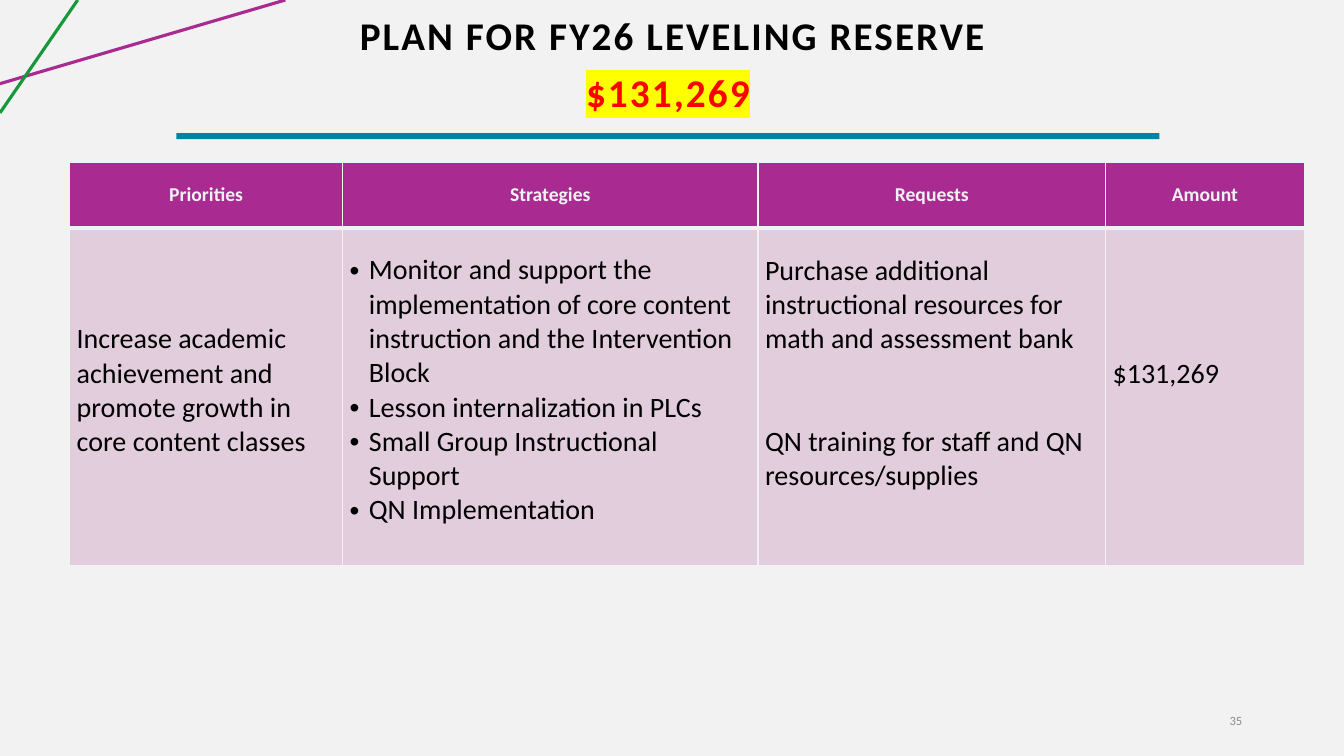
"""Build the leveling reserve plan slide."""
from pptx import Presentation
from pptx import util as u
from pptx.dml.color import RGBColor
from pptx.enum import shapes, text
from pptx.oxml.ns import qn
from lxml import etree

WIDTH, HEIGHT = u.Inches(13.33), u.Inches(7.5)
FONT = "Calibri"
PALE = RGBColor(0xF2, 0xF2, 0xF2)
PURPLE = RGBColor(0xA9, 0x2A, 0x91)
GREEN = RGBColor(0x15, 0x98, 0x39)
TEAL = RGBColor(0x00, 0x83, 0xA9)
LILAC = RGBColor(0xE2, 0xCD, 0xDC)
GREY = RGBColor(0x8C, 0x8C, 0x8C)
BLACK = RGBColor(0x00, 0x00, 0x00)
RED = RGBColor(0xFF, 0x00, 0x00)
YELLOW = RGBColor(0xFF, 0xFF, 0x00)

LINE_HEIGHT = u.Pt(24.4)
COLUMNS = [20.32, 30.9, 25.87, 14.77]
ROWS = [8.7, 44.67]
HEADINGS = ["Priorities", "Strategies", "Requests", "Amount"]
PLAN = [
    (["Increase academic achievement and promote growth in core content classes"], 3),
    (["Monitor and support the implementation of core content instruction "
      "and the Intervention Block",
      "Lesson internalization in PLCs",
      "Small Group Instructional Support",
      "QN Implementation"], 1),
    (["Purchase additional instructional resources for math and assessment bank",
      "QN training for staff and QN resources/supplies"], 2),
    (["$131,269"], 5),
]


def across(share):
    """Turn a percentage of the slide's width into a length."""
    return u.Emu(round(WIDTH * share / 100))


def down(share):
    """Turn a percentage of the slide's height into a length."""
    return u.Emu(round(HEIGHT * share / 100))


def place(left, top, width, height):
    """Turn four percentages into a position and size."""
    return across(left), down(top), across(width), down(height)


def style(p, size, color, align, bold=False):
    """Set the font and alignment of a paragraph."""
    p.alignment = align
    p.font.name, p.font.size, p.font.bold = FONT, u.Pt(size), bold
    p.font.color.rgb = color


def add_line(s, start, end, color):
    """Draw a thin accent line between two points."""
    line = s.shapes.add_connector(
        shapes.MSO_CONNECTOR.STRAIGHT,
        across(start[0]), down(start[1]), across(end[0]), down(end[1]))
    line.line.color.rgb = color
    line.line.width = u.Pt(2.25)
    etree.SubElement(line._element.spPr, qn("a:effectLst"))


def add_text(s, box, words, size, color, align, bold=False):
    """Add a one-line text box centred vertically and return its paragraph."""
    tf = s.shapes.add_textbox(*place(*box)).text_frame
    tf.word_wrap = True
    tf.vertical_anchor = text.MSO_ANCHOR.MIDDLE
    p = tf.paragraphs[0]
    p.add_run().text = words
    style(p, size, color, align, bold)
    return p


def add_heading(s, box, words, color, highlight=None):
    """Add a bold, letter-spaced heading, highlighted if asked."""
    p = add_text(s, box, words, 28, color, text.PP_ALIGN.CENTER, True)
    p.line_spacing = 0.9
    props = p.runs[0]._r.get_or_add_rPr()
    props.set("spc", "150")
    if highlight:
        mark = etree.SubElement(props, qn("a:highlight"))
        etree.SubElement(mark, qn("a:srgbClr"), val=str(highlight))


def add_bar(s, box, color):
    """Add a plain filled bar."""
    sp = s.shapes.add_shape(shapes.MSO_SHAPE.RECTANGLE, *place(*box))
    sp.shadow.inherit = False
    sp.fill.solid()
    sp.fill.fore_color.rgb = color
    sp.line.fill.background()


def add_bullet(p):
    """Give a paragraph a hanging bullet."""
    props = p._p.get_or_add_pPr()
    indent = u.Inches(0.19)
    props.set("marL", str(indent))
    props.set("indent", str(-indent))
    for tag, name, value in (("a:buFont", "typeface", "Arial"),
                             ("a:buChar", "char", "•")):
        bullet = etree.SubElement(props, qn(tag))
        bullet.set(name, value)
        props.insert_element_before(bullet, "a:defRPr")


def format_cell(cell, fill, bottom_width, anchor):
    """Set borders, fill, margins and anchor of a cell."""
    props = cell._tc.get_or_add_tcPr()
    for side, width in zip("LRTB", (1, 1, 1, bottom_width)):
        border = etree.SubElement(props, qn(f"a:ln{side}"), w=str(u.Pt(width)))
        solid = etree.SubElement(border, qn("a:solidFill"))
        etree.SubElement(solid, qn("a:srgbClr"), val=str(PALE))
    cell.fill.solid()
    cell.fill.fore_color.rgb = fill
    cell.margin_left = cell.margin_right = u.Inches(0.07)
    cell.margin_top = cell.margin_bottom = u.Inches(0.04)
    cell.vertical_anchor = anchor


def add_plan(s):
    """Add the table of priorities, strategies, requests and amount."""
    box = place(5.18, 21.47, sum(COLUMNS), sum(ROWS))
    table = s.shapes.add_table(len(ROWS), len(COLUMNS), *box).table
    table.first_row = table.horz_banding = False
    for row, share in zip(table.rows, ROWS):
        row.height = down(share)
    for i, share in enumerate(COLUMNS):
        table.columns[i].width = across(share)
        head, body = table.cell(0, i), table.cell(1, i)
        format_cell(head, PURPLE, 3, text.MSO_ANCHOR.MIDDLE)
        head.text = HEADINGS[i]
        style(head.text_frame.paragraphs[0], 14, PALE, text.PP_ALIGN.CENTER, True)

        items, lines_below = PLAN[i]
        format_cell(body, LILAC, 1, text.MSO_ANCHOR.BOTTOM)
        body.margin_bottom += lines_below * LINE_HEIGHT
        body.text = "\n".join(items)
        for p in body.text_frame.paragraphs:
            style(p, 20, BLACK, text.PP_ALIGN.LEFT)
            if HEADINGS[i] == "Strategies":
                add_bullet(p)
        if HEADINGS[i] == "Requests":
            p.space_before = 2 * LINE_HEIGHT


def main():
    """Build and save the slide."""
    prs = Presentation()
    prs.slide_width, prs.slide_height = WIDTH, HEIGHT
    s = prs.slides.add_slide(prs.slide_layouts[6])
    s.background.fill.solid()
    s.background.fill.fore_color.rgb = PALE
    add_line(s, (0, 11.07), (21.23, 0), PURPLE)
    add_line(s, (5.78, 0), (0, 14.93), GREEN)
    add_text(s, (85.07, 92.67, 8.1, 5.33), "35", 9, GREY, text.PP_ALIGN.RIGHT)
    add_heading(s, (6.9, 0.53, 86.27, 9.07), "PLAN FOR FY26 LEVELING RESERVE", BLACK)
    add_plan(s)
    add_heading(s, (11.33, 6.4, 76.74, 12.27), "$131,269", RED, YELLOW)
    add_bar(s, (13.13, 17.6, 73.14, 0.8), TEAL)
    prs.save("out.pptx")


if __name__ == "__main__":
    main()
